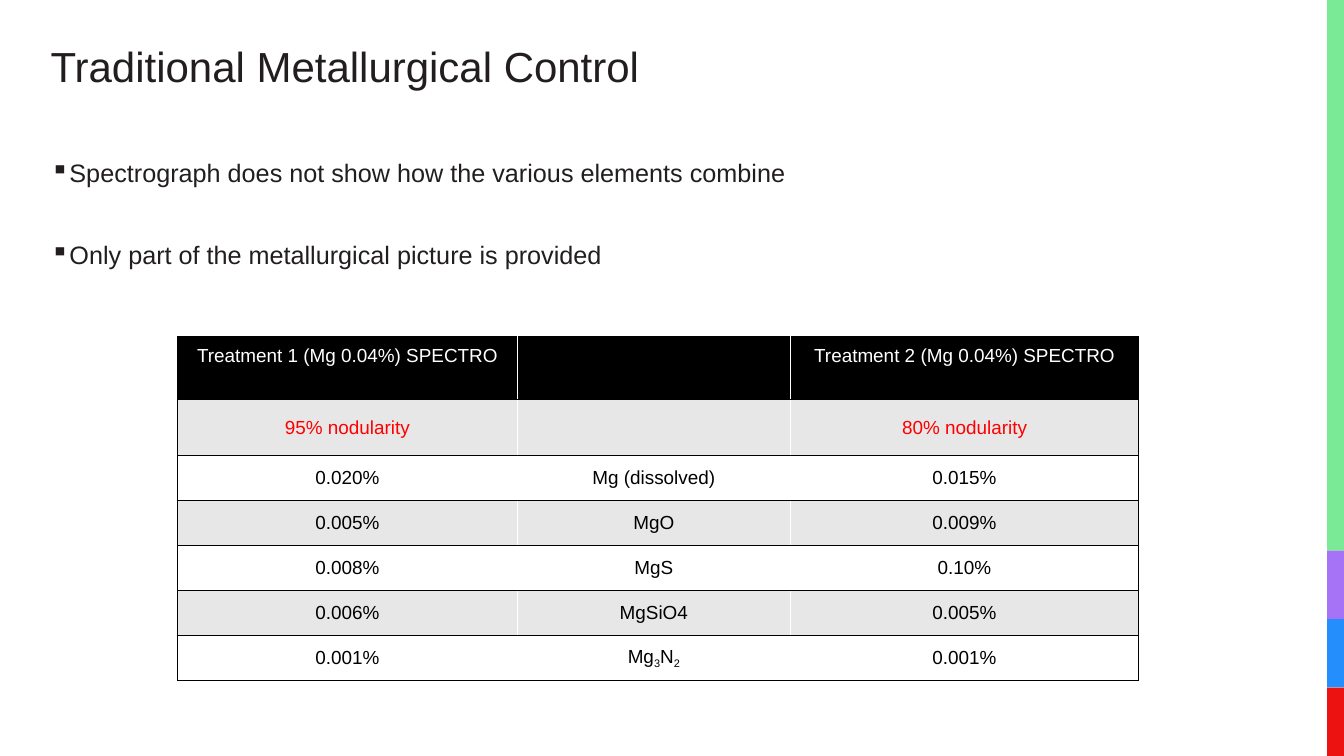
from pptx import Presentation
from pptx.dml.color import RGBColor
from pptx.enum.shapes import MSO_SHAPE
from pptx.enum.text import MSO_ANCHOR, PP_ALIGN
from pptx.oxml.ns import qn
from pptx.util import Pt
from lxml.etree import SubElement

WIDTH, HEIGHT = 1280.16, 720
INK, BLACK, WHITE, GREY, RED = "221E1F", "000000", "FFFFFF", "E7E7E7", "FF0000"
STRIPE = [("7AEA97", 524.4), ("A673F7", 65.2), ("248FFC", 65.2), ("EC1211", 65.2)]
POINTS = [
    "Spectrograph does not show how the various elements combine",
    "Only part of the metallurgical picture is provided",
]
COLS = [323.3, 260.6, 331.2]
ROWS = [60.5, 52.5] + [43] * 5
DATA = [
    ["Treatment 1 (Mg 0.04%) SPECTRO", "", "Treatment 2 (Mg 0.04%) SPECTRO"],
    ["95% nodularity", "", "80% nodularity"],
    ["0.020%", "Mg (dissolved)", "0.015%"],
    ["0.005%", "MgO", "0.009%"],
    ["0.008%", "MgS", "0.10%"],
    ["0.006%", "MgSiO4", "0.005%"],
    ["0.001%", "Mg_3N_2", "0.001%"],
]


def paint(target, color):
    target.solid()
    target.fore_color.rgb = RGBColor.from_string(color)


def style(para, size, color):
    para.font.name = "Arial"
    para.font.size = Pt(size)
    paint(para.font.fill, color)


def clear(frame):
    """Take away the insets and start the text at the top."""
    frame.margin_left = frame.margin_right = Pt(0)
    frame.margin_top = frame.margin_bottom = Pt(0)
    frame.vertical_anchor = MSO_ANCHOR.TOP
    frame.word_wrap = True


def add_stripe(slide):
    top = 0
    for color, height in STRIPE:
        bar = slide.shapes.add_shape(
            MSO_SHAPE.RECTANGLE, Pt(1264), Pt(top), Pt(WIDTH - 1264), Pt(height))
        bar.shadow.inherit = False
        paint(bar.fill, color)
        bar.line.fill.background()
        top += height


def set_title(slide, text):
    title = slide.shapes.title
    title.left, title.top = Pt(48.2), Pt(43.2)
    title.width, title.height = Pt(1157), Pt(97.2)
    title.text = text
    clear(title.text_frame)
    para = title.text_frame.paragraphs[0]
    para.alignment = PP_ALIGN.LEFT
    para.line_spacing = 0.91
    style(para, 40, INK)


def add_bullets(slide, lines):
    box = slide.shapes.add_textbox(Pt(48.2), Pt(146.9), Pt(1156.3), Pt(159))
    frame = box.text_frame
    clear(frame)
    for i, line in enumerate(lines):
        para = frame.paragraphs[0] if i == 0 else frame.add_paragraph()
        para.text = line
        para.line_spacing = 1.11
        if i:
            para.space_before = Pt(45.6)
        props = para._p.get_or_add_pPr()
        props.set("marL", str(Pt(18)))
        props.set("indent", str(-Pt(18)))
        SubElement(props, qn("a:buChar"), char="▪")
        style(para, 24, INK)


def add_edges(cell, sides):
    props = cell._tc.get_or_add_tcPr()
    for i, side in enumerate(sides):
        edge = props.makeelement(qn("a:ln" + side), {"w": str(Pt(1))})
        fill = SubElement(edge, qn("a:solidFill"))
        SubElement(fill, qn("a:srgbClr"), val=BLACK)
        props.insert(i, edge)


def write(para, text):
    """Add text in which an underscore lowers the next character."""
    first, *rest = text.split("_")
    para.add_run().text = first
    for part in rest:
        low = para.add_run()
        low.text = part[0]
        low.font._element.set("baseline", "-25000")
        if part[1:]:
            para.add_run().text = part[1:]


def add_grid(slide):
    grid = slide.shapes.add_table(
        len(ROWS), len(COLS), Pt(169.2), Pt(320.4), Pt(sum(COLS)), Pt(sum(ROWS))).table
    for col, width in zip(grid.columns, COLS):
        col.width = Pt(width)
    for r, height in enumerate(ROWS):
        grid.rows[r].height = Pt(height)
        back = BLACK if r == 0 else GREY if r % 2 else WHITE
        ink = {0: WHITE, 1: RED}.get(r, BLACK)
        for c, text in enumerate(DATA[r]):
            cell = grid.cell(r, c)
            paint(cell.fill, back)
            add_edges(cell, [["L", "T", "B"], ["T", "B"], ["R", "T", "B"]][c])
            cell.vertical_anchor = MSO_ANCHOR.MIDDLE if r else MSO_ANCHOR.TOP
            if r == 0:
                cell.margin_top = Pt(9)
            para = cell.text_frame.paragraphs[0]
            para.alignment = PP_ALIGN.CENTER
            style(para, 18, ink)
            if text:
                write(para, text)


def main():
    deck = Presentation()
    deck.slide_width, deck.slide_height = Pt(WIDTH), Pt(HEIGHT)
    slide = deck.slides.add_slide(deck.slide_layouts[5])
    add_stripe(slide)
    set_title(slide, "Traditional Metallurgical Control")
    add_bullets(slide, POINTS)
    add_grid(slide)
    deck.save("out.pptx")


if __name__ == "__main__":
    main()
